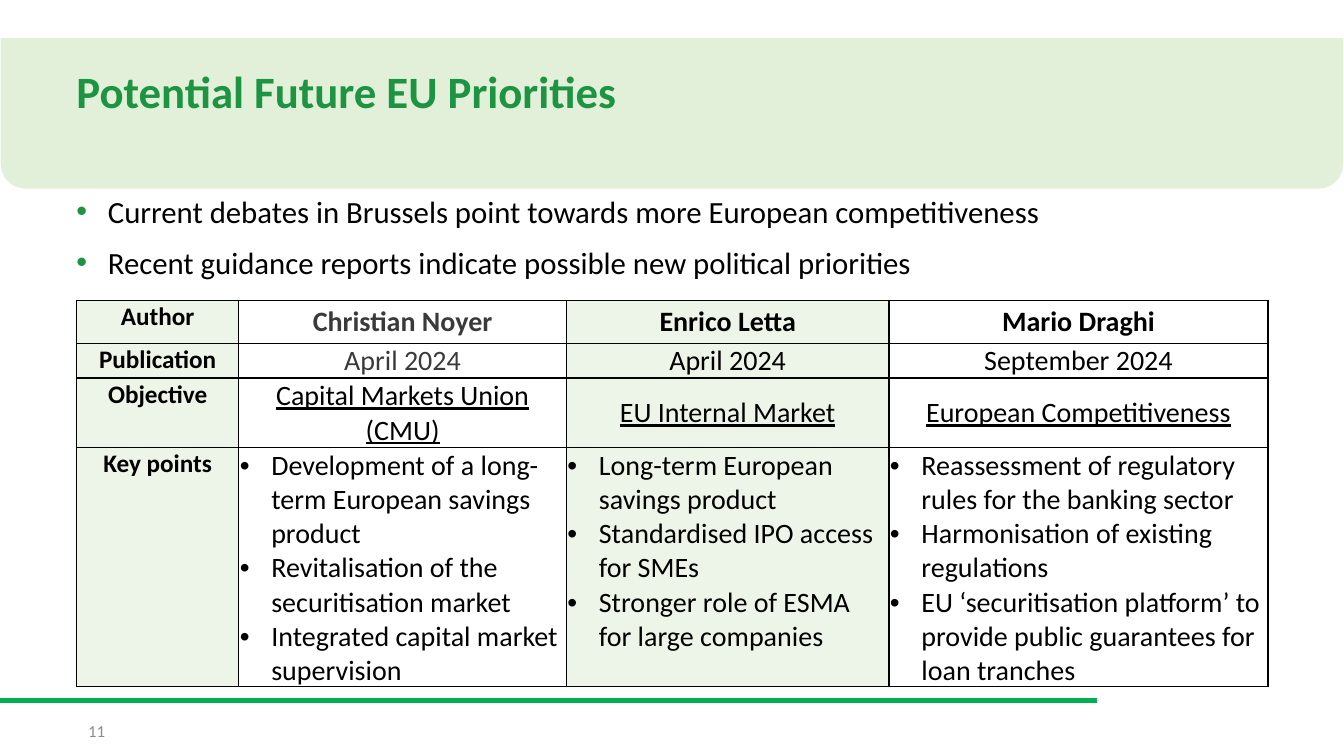
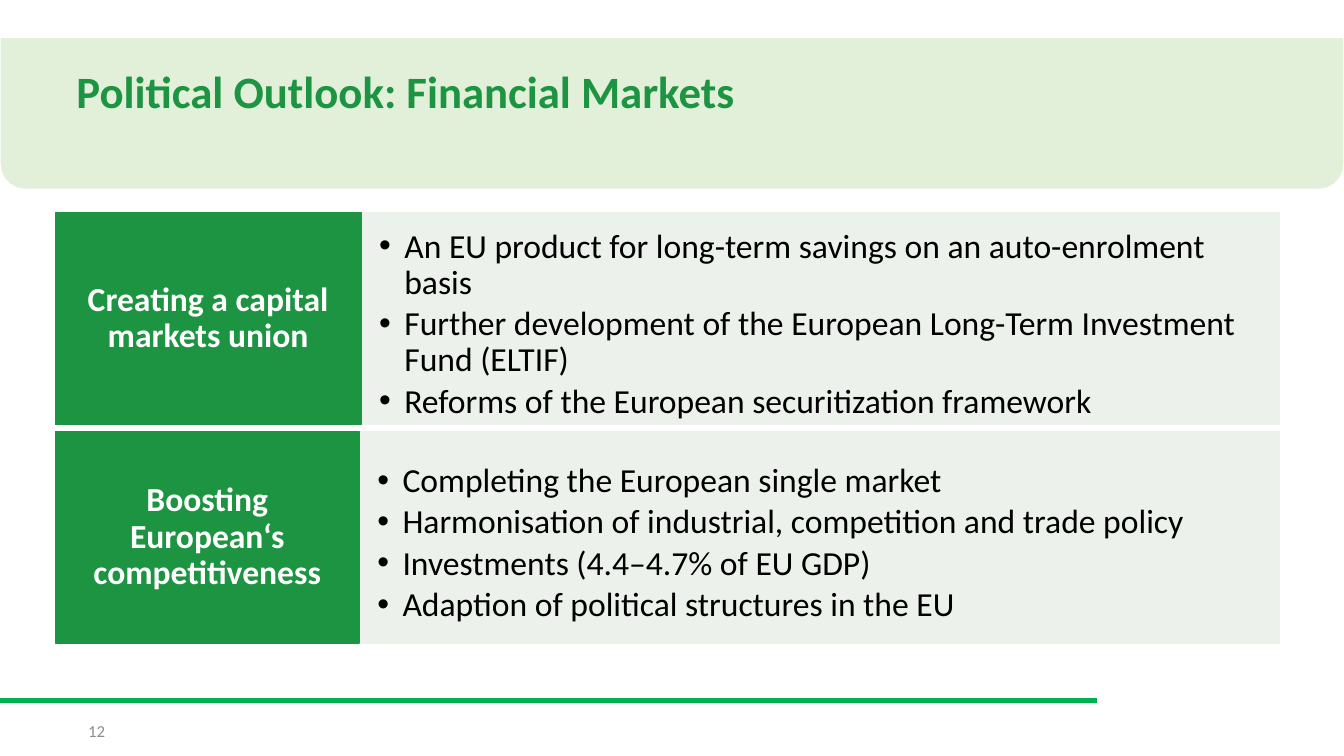
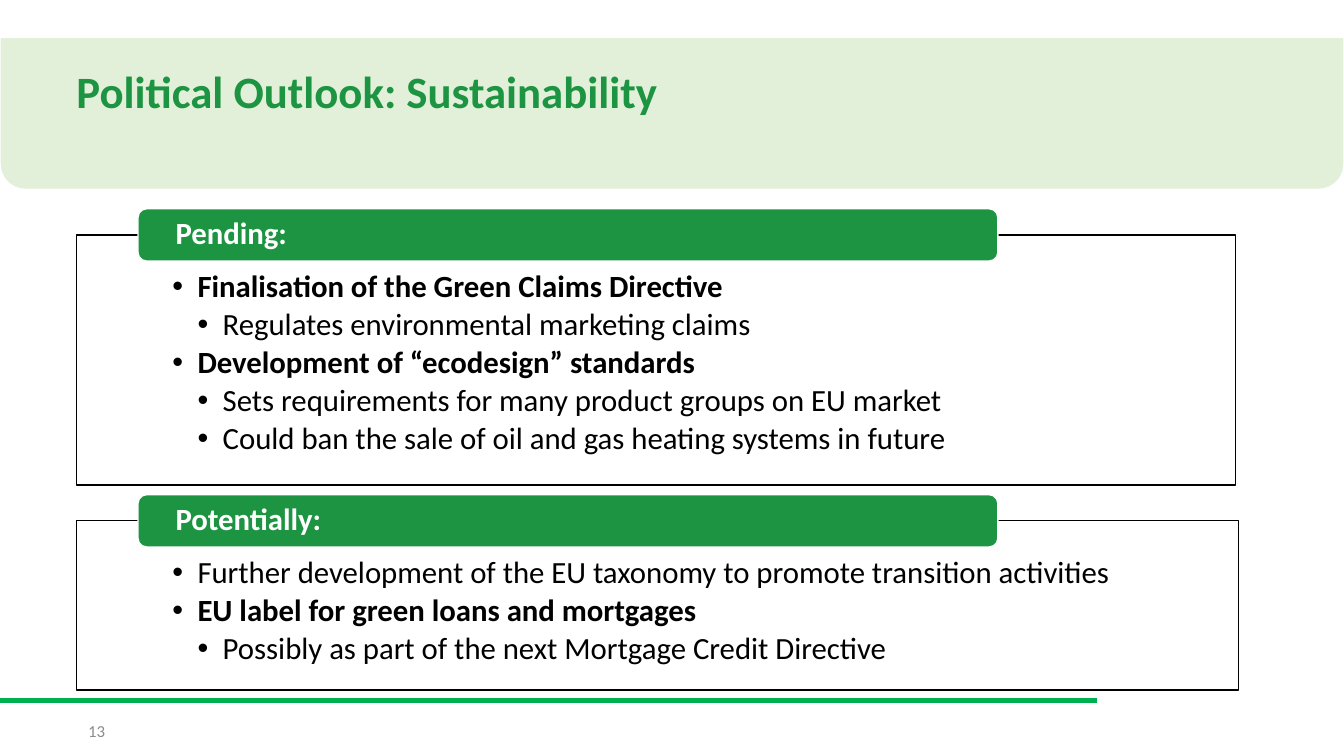
"""Build three slides on EU policy priorities."""
from lxml.etree import SubElement
from pptx import Presentation
from pptx.dml.color import RGBColor
from pptx.enum.shapes import MSO_CONNECTOR, MSO_SHAPE
from pptx.enum.text import MSO_ANCHOR, PP_ALIGN
from pptx.oxml.ns import qn
from pptx.util import Pt

COLORS = {
    "green": "1C9441", "rule": "00B050", "band": "E2F0D9", "panel": "EBF1E9",
    "tint": "A9D18E", "black": "000000", "charcoal": "3A3A3A",
    "grey": "8C8C8C", "white": "FFFFFF",
}
FONT = "Calibri"
MARGINS = ("margin_left", "margin_top", "margin_right", "margin_bottom")
CENTER = {"alignment": PP_ALIGN.CENTER}
TIGHT = {"line_spacing": 0.9}


def rgb(name):
    return RGBColor.from_string(COLORS[name])


def apply(target, values):
    for name, value in values.items():
        setattr(target, name, value)


def set_alpha(properties, percent):
    color = properties.find(qn("a:solidFill")).find(qn("a:srgbClr"))
    SubElement(color, qn("a:alpha"), val=str(percent * 1000))


def add_bullet(paragraph, indent, level=0, color=None):
    properties = paragraph._p.get_or_add_pPr()
    properties.set("marL", str(Pt(indent * (level + 1))))
    properties.set("indent", str(-Pt(indent)))
    if color:
        holder = SubElement(properties, qn("a:buClr"))
        SubElement(holder, qn("a:srgbClr"), val=COLORS[color])
    SubElement(properties, qn("a:buFont"), typeface="Arial")
    SubElement(properties, qn("a:buChar"), char="•")


def write_line(paragraph, text, size, color="black", layout=None, **font):
    apply(paragraph, layout or {})
    span = paragraph.add_run()
    span.text = text
    apply(span.font, {"name": FONT, "size": Pt(size), **font})
    span.font.color.rgb = rgb(color)


def write_bullets(frame, items, size, indent, layout=None, gap=0, color=None):
    """Write (level, bold, text) items as a bulleted list."""
    for index, (level, bold, text) in enumerate(items):
        paragraph = frame.paragraphs[0] if index == 0 else frame.add_paragraph()
        add_bullet(paragraph, indent, level, color)
        write_line(paragraph, text, size, layout=layout, bold=bold)
        if index and gap:
            paragraph.space_before = Pt(gap)


def prepare_frame(frame, anchor, margins):
    apply(frame, {"word_wrap": True, "vertical_anchor": anchor})
    apply(frame, dict(zip(MARGINS, map(Pt, margins))))
    return frame


def add_text(page, area, anchor=MSO_ANCHOR.TOP):
    box = page.shapes.add_textbox(*map(Pt, area))
    return prepare_frame(box.text_frame, anchor, (7.2, 3.6, 7.2, 3.6))


def add_block(page, kind, area, fill, line, margins=(0, 0, 0, 0), anchor=MSO_ANCHOR.MIDDLE):
    block = page.shapes.add_shape(kind, *map(Pt, area))
    block.shadow.inherit = False
    block.fill.solid()
    block.fill.fore_color.rgb = rgb(fill)
    block.line.color.rgb = rgb(line)
    block.line.width = Pt(1)
    prepare_frame(block.text_frame, anchor, margins)
    block.text_frame.paragraphs[0].alignment = PP_ALIGN.LEFT
    return block


def add_page(deck, title, number):
    """Add a blank page with the shared rule, band, title and number."""
    page = deck.slides.add_slide(deck.slide_layouts[6])
    rule = page.shapes.add_connector(
        MSO_CONNECTOR.STRAIGHT, Pt(0), Pt(500.4), Pt(783.4), Pt(500.4))
    rule.line.color.rgb = rgb("rule")
    rule.line.width = Pt(3.25)
    SubElement(rule.element.spPr, qn("a:effectLst"))
    band = add_block(page, MSO_SHAPE.ROUND_2_SAME_RECTANGLE, (0, 26.8, 960, 108.4), "band", "white")
    band.rotation = 180
    heading = add_text(page, (47.5, 46, 867, 55.5))
    write_line(heading.paragraphs[0], title, 32, "green", TIGHT, bold=True)
    footer = add_text(page, (39.6, 507.6, 42.5, 28.8), MSO_ANCHOR.MIDDLE)
    write_line(footer.paragraphs[0], str(number), 12, "grey", {"alignment": PP_ALIGN.RIGHT})
    return page


def add_borders(cell):
    properties = cell._tc.get_or_add_tcPr()
    for side in ("lnL", "lnR", "lnT", "lnB"):
        edge = SubElement(properties, qn(f"a:{side}"), w=str(Pt(1)))
        fill = SubElement(edge, qn("a:solidFill"))
        SubElement(fill, qn("a:srgbClr"), val=COLORS["black"])


def style_cell(cell, tinted, anchor):
    add_borders(cell)
    apply(cell, dict(zip(MARGINS, map(Pt, (0.7, 0.7, 0.7, 0)))))
    cell.vertical_anchor = anchor
    if tinted:
        cell.fill.solid()
        cell.fill.fore_color.rgb = rgb("tint")
        set_alpha(cell._tc.tcPr, 20)
    else:
        cell.fill.background()


def add_report_table(page, rows, widths, heights):
    table = page.shapes.add_table(
        len(rows), len(widths), Pt(54.7), Pt(214.6), Pt(sum(widths)), Pt(sum(heights))).table
    apply(table, {"first_row": False, "horz_banding": False})
    for column, width in zip(table.columns, widths):
        column.width = Pt(width)
    for row, height in zip(table.rows, heights):
        row.height = Pt(height)
    for r, values in enumerate(rows):
        for c, value in enumerate(values):
            cell = table.cell(r, c)
            centered = c > 0 and r in (0, 2)
            style_cell(cell, c in (0, 2), MSO_ANCHOR.MIDDLE if centered else MSO_ANCHOR.TOP)
            if isinstance(value, list):
                write_bullets(cell.text_frame, [(0, False, text) for text in value], 20, 22.5)
                continue
            write_line(
                cell.text_frame.paragraphs[0], value, 20 if c else 18,
                "charcoal" if c == 1 and r < 2 else "black", CENTER,
                bold=c == 0 or r == 0, underline=c > 0 and r == 2)


def add_topic(page, top, split, label, points):
    """Add a green label with a pale panel of points on its right."""
    left, right, height = 39.6, 913.7, 151.2
    panel = add_block(page, MSO_SHAPE.RECTANGLE, (split, top, right - split, height),
                      "panel", "panel", (13, 9, 13, 0))
    for properties in (panel.element.spPr, panel.element.spPr.find(qn("a:ln"))):
        set_alpha(properties, 90)
    write_bullets(panel.text_frame, [(0, False, text) for text in points], 24, 18,
                  {**TIGHT, "space_after": Pt(3.6)})
    tag = add_block(page, MSO_SHAPE.RECTANGLE, (left, top, split - left, height),
                    "green", "green", (8.6, 15, 8.6, 15))
    write_line(tag.text_frame.paragraphs[0], label, 24, "white", {**TIGHT, **CENTER}, bold=True)


def add_group(page, top, width, height, label, items):
    """Add an outlined list with a green bar across its top edge."""
    outline = add_block(page, MSO_SHAPE.RECTANGLE, (54.7, top, width, height),
                        "white", "black", (68.4, 26, 68.4, 12), MSO_ANCHOR.TOP)
    write_bullets(outline.text_frame, items, 22, 18, {**TIGHT, "space_after": Pt(3.3)})
    bar = add_block(page, MSO_SHAPE.ROUNDED_RECTANGLE, (98.6, top - 18.7, 614.2, 37.4),
                    "green", "white", (25, 0, 25, 0))
    write_line(bar.text_frame.paragraphs[0], label, 22, "white", TIGHT, bold=True)


def add_priorities(deck):
    page = add_page(deck, "Potential Future EU Priorities", 11)
    intro = add_text(page, (47.5, 133.9, 867, 90.7))
    write_bullets(intro, [
        (0, False, "Current debates in Brussels point towards more European competitiveness"),
        (0, False, "Recent guidance reports indicate possible new political priorities"),
    ], 22, 22.5, gap=10, color="green")
    add_report_table(page, [
        ["Author", "Christian Noyer", "Enrico Letta", "Mario Draghi"],
        ["Publication", "April 2024", "April 2024", "September 2024"],
        ["Objective", "Capital Markets Union (CMU)", "EU Internal Market", "European Competitiveness"],
        ["Key points",
         ["Development of a long-term European savings product",
          "Revitalisation of the securitisation market",
          "Integrated capital market supervision"],
         ["Long-term European savings product",
          "Standardised IPO access for SMEs",
          "Stronger role of ESMA for large companies"],
         ["Reassessment of regulatory rules for the banking sector",
          "Harmonisation of existing regulations",
          "EU ‘securitisation platform’ to provide public guarantees for loan tranches"]],
    ], (115.9, 234, 230.4, 270.7), (30.5, 25, 49.5, 171))


def add_financial_markets(deck):
    page = add_page(deck, "Political Outlook: Financial Markets", 12)
    add_topic(page, 151.9, 257.8, "Creating a capital markets union", [
        "An EU product for long-term savings on an auto-enrolment basis",
        "Further development of the European Long-Term Investment Fund (ELTIF)",
        "Reforms of the European securitization framework",
    ])
    add_topic(page, 308.2, 256.5, "Boosting European‘s competitiveness", [
        "Completing the European single market",
        "Harmonisation of industrial, competition and trade policy",
        "Investments (4.4–4.7% of EU GDP)",
        "Adaption of political structures in the EU",
    ])


def add_sustainability(deck):
    page = add_page(deck, "Political Outlook: Sustainability", 13)
    add_group(page, 167.8, 828, 178.6, "Pending:", [
        (0, True, "Finalisation of the Green Claims Directive"),
        (1, False, "Regulates environmental marketing claims"),
        (0, True, "Development of “ecodesign” standards"),
        (1, False, "Sets requirements for many product groups on EU market"),
        (1, False, "Could ban the sale of oil and gas heating systems in future"),
    ])
    add_group(page, 372, 830.2, 121, "Potentially:", [
        (0, False, "Further development of the EU taxonomy to promote transition activities"),
        (0, True, "EU label for green loans and mortgages"),
        (1, False, "Possibly as part of the next Mortgage Credit Directive"),
    ])


def main():
    deck = Presentation()
    apply(deck, {"slide_width": Pt(960), "slide_height": Pt(540)})
    add_priorities(deck)
    add_financial_markets(deck)
    add_sustainability(deck)
    deck.save("out.pptx")


if __name__ == "__main__":
    main()
